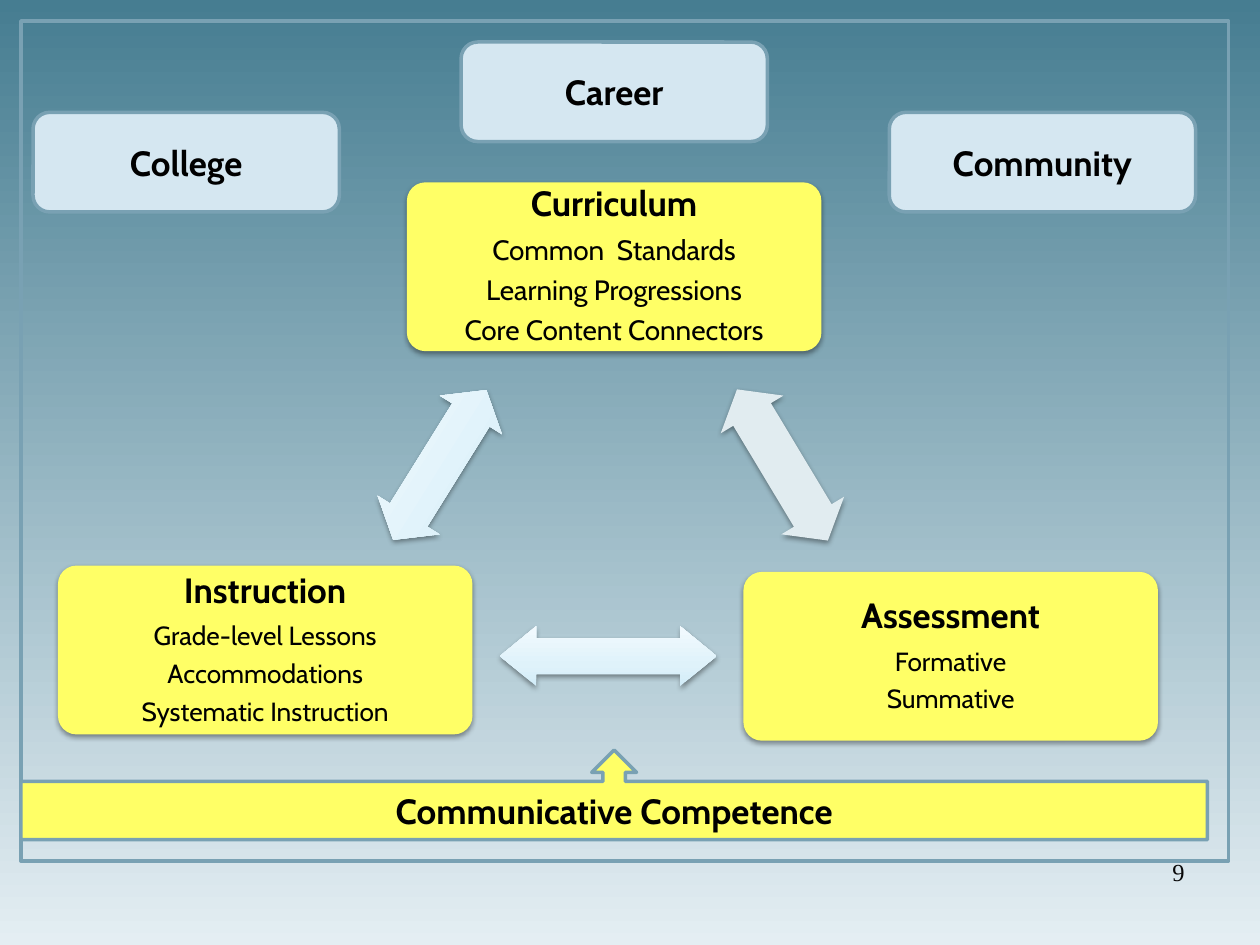
from copy import deepcopy
from dataclasses import dataclass

from lxml import etree
from pptx import Presentation
from pptx import util as u
from pptx.dml.color import RGBColor
from pptx.enum import shapes, text
from pptx.oxml import ns

COLOURS = {
    "sky_top": "467D91",
    "sky_bottom": "E4EEF3",
    "outline": "79A1B3",
    "goal": "D5E7F1",
    "yellow": "FFFF66",
    "ice_dark": "D3EDF9",
    "ice_mid": "DFF2FA",
    "ice_light": "F2FAFE",
    "mist": "E1ECF0",
    "black": "000000",
    "number": "080808",
}
TITLE_SIZE = 20
FORM = shapes.MSO_SHAPE


@dataclass(frozen=True)
class Area:
    left: float
    top: float
    width: float
    height: float

    def lengths(self) -> tuple:
        return tuple(u.Pt(n) for n in (self.left, self.top, self.width, self.height))


@dataclass(frozen=True)
class Goal:
    name: str
    left: float
    top: float


@dataclass(frozen=True)
class Card:
    title: str
    items: tuple[str, ...]
    left: float
    top: float
    size: float


@dataclass(frozen=True)
class Arrow:
    area: Area
    rotation: float
    head: float
    stops: tuple[tuple[float, str], ...]


GOALS = (
    Goal("College", 18.9, 64.2),
    Goal("Career", 263.5, 24),
    Goal("Community", 508.2, 64.2),
)
CARDS = (
    Card("Curriculum",
         ("Common  Standards", "Learning Progressions", "Core Content Connectors"),
         232.5, 104.2, 16),
    Card("Instruction",
         ("Grade-level Lessons", "Accommodations", "Systematic Instruction"),
         33.1, 323.2, 15),
    Card("Assessment", ("Formative", "Summative"), 424.8, 326.8, 15),
)
ICE = ((0, "ice_dark"), (0.35, "ice_mid"), (1, "ice_light"))
ARROWS = (
    Arrow(Area(200.9, 244.8, 100.8, 41.8), 301.9, 0.4, ICE),
    Arrow(Area(396.7, 244.8, 100.8, 41.8), 59, 0.4, ((0, "mist"),)),
    Arrow(Area(285.6, 357.8, 124, 34.2), 0, 0.61, ICE),
)


def colour(name: str) -> RGBColor:
    return RGBColor.from_string(COLOURS[name])


def add_form(page, form, area: Area, fill: str = "", outlined: bool = False):
    shape = page.shapes.add_shape(form, *area.lengths())
    shape.shadow.inherit = False
    if fill:
        shape.fill.solid()
        shape.fill.fore_color.rgb = colour(fill)
    else:
        shape.fill.background()
    if outlined:
        shape.line.color.rgb = colour("outline")
        shape.line.width = u.Pt(2)
    else:
        shape.line.fill.background()
    return shape


def add_shadow(shape) -> None:
    effects = shape._element.spPr.find(ns.qn("a:effectLst"))
    shadow = etree.SubElement(
        effects, ns.qn("a:outerShdw"), blurRad=str(u.Pt(3.1)),
        dist=str(u.Pt(1.6)), dir="5400000", rotWithShape="0")
    tint = etree.SubElement(shadow, ns.qn("a:srgbClr"), val=COLOURS["black"])
    etree.SubElement(tint, ns.qn("a:alpha"), val="38000")


def add_span(para, words: str, size: float, bold: bool = False,
             face: str = "Cabin", tint: str = "black") -> None:
    span = para.add_run()
    span.text = words
    span.font.size = u.Pt(size)
    span.font.bold = bold
    span.font.name = face
    span.font.color.rgb = colour(tint)


def add_title(shape, words: str):
    frame = shape.text_frame
    frame.word_wrap = True
    frame.vertical_anchor = text.MSO_ANCHOR.MIDDLE
    para = frame.paragraphs[0]
    para.alignment = text.PP_ALIGN.CENTER
    add_span(para, words, TITLE_SIZE, bold=True)
    return frame


def add_goal(page, goal: Goal) -> None:
    area = Area(goal.left, goal.top, 175, 56.9)
    add_title(add_form(page, FORM.ROUNDED_RECTANGLE, area, "goal", True), goal.name)


def add_card(page, card: Card) -> None:
    area = Area(card.left, card.top, 236.9, 96.5)
    box = add_form(page, FORM.ROUNDED_RECTANGLE, area, "yellow")
    box.adjustments[0] = 0.11
    add_shadow(box)
    frame = add_title(box, card.title)
    frame.margin_left = frame.margin_right = u.Pt(8.6)
    frame.margin_top = frame.margin_bottom = u.Pt(8.6)
    for item in card.items:
        para = frame.add_paragraph()
        para.alignment = text.PP_ALIGN.CENTER
        add_span(para, item, card.size)
    for para in frame.paragraphs:
        para.line_spacing = 0.9
        para.space_after = u.Pt(0.35 * para.runs[0].font.size.pt)


def paint_stops(fill, stops: tuple[tuple[float, str], ...], angle: float) -> None:
    fill.gradient_angle = angle
    for stop, (position, name) in zip(fill.gradient_stops, stops):
        stop.position = position
        stop.color.rgb = colour(name)


def add_arrow(page, arrow: Arrow) -> None:
    shape = add_form(page, FORM.LEFT_RIGHT_ARROW, arrow.area, arrow.stops[0][1])
    shape.rotation = arrow.rotation
    shape.adjustments[0] = 0.6
    shape.adjustments[1] = arrow.head
    add_shadow(shape)
    if len(arrow.stops) > 1:
        shape.fill.gradient()
        stop_list = shape._element.spPr.find(".//" + ns.qn("a:gsLst"))
        while len(stop_list) < len(arrow.stops):
            stop_list.append(deepcopy(stop_list[-1]))
        paint_stops(shape.fill, arrow.stops, 90)


def main() -> None:
    deck = Presentation()
    deck.slide_width, deck.slide_height = u.Pt(720), u.Pt(540)
    page = deck.slides.add_slide(deck.slide_layouts[6])
    backdrop = page.background.fill
    backdrop.gradient()
    paint_stops(backdrop, ((0, "sky_top"), (1, "sky_bottom")), 270)

    add_form(page, FORM.RECTANGLE, Area(12, 12, 690, 480), outlined=True)
    for goal in GOALS:
        add_goal(page, goal)
    for card in CARDS:
        add_card(page, card)
    for arrow in ARROWS:
        add_arrow(page, arrow)
    base = add_form(page, FORM.UP_ARROW_CALLOUT, Area(12, 428.6, 678, 51.2),
                    "yellow", True)
    add_title(base, "Communicative Competence")

    number = page.shapes.add_textbox(*Area(516, 486, 168, 37.5).lengths())
    number.text_frame.word_wrap = True
    para = number.text_frame.paragraphs[0]
    para.alignment = text.PP_ALIGN.RIGHT
    add_span(para, "9", 14, face="Times New Roman", tint="number")
    deck.save("out.pptx")


if __name__ == "__main__":
    main()
